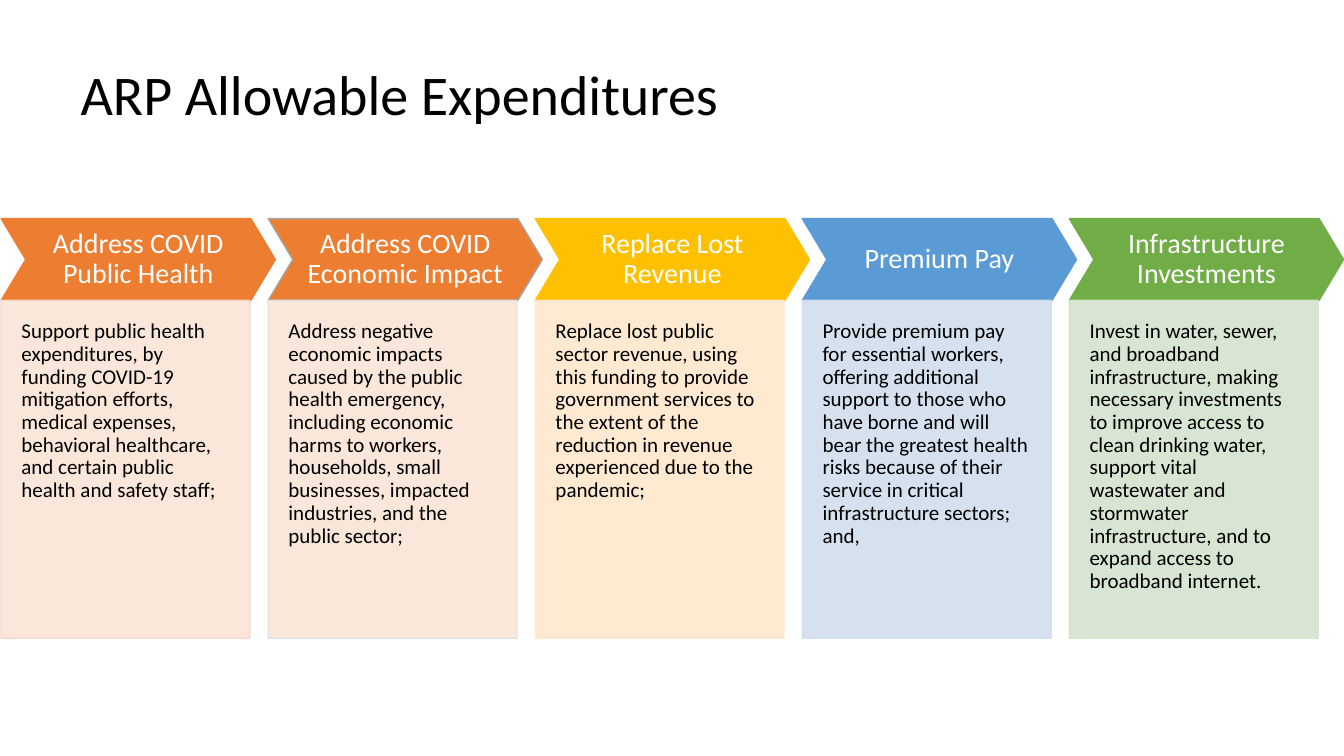
from lxml import etree
from pptx import Presentation
from pptx.dml.color import RGBColor
from pptx.enum.shapes import MSO_SHAPE
from pptx.enum.text import MSO_ANCHOR, MSO_AUTO_SIZE, PP_ALIGN
from pptx.oxml.ns import qn
from pptx.util import Cm, Pt

CHEVRON, RECT = MSO_SHAPE.CHEVRON, MSO_SHAPE.RECTANGLE
TOP, MIDDLE = MSO_ANCHOR.TOP, MSO_ANCHOR.MIDDLE
LEFT, CENTER = PP_ALIGN.LEFT, PP_ALIGN.CENTER
NO_FIT = MSO_AUTO_SIZE.NONE

FONT = "Calibri"
COLORS = {
    "black": "000000", "white": "FFFFFF",
    "orange": "ED7D31", "gray": "A5A5A5", "gold": "FFC000",
    "blue": "5B9BD5", "green": "70AD47",
    "pale_orange": "FBE5D6", "pale_rose": "F8D7CE", "pale_gray": "E1E1E1",
    "pale_gold": "FFE8CC", "pale_blue": "D2DEEF", "pale_green": "D5E3CF",
}

PITCH, HEAD_W, BODY_W = 6.73, 6.91, 6.27
HEAD_H, BODY_H = 2.06, 8.51

CATEGORIES = [
    ("Address COVID Public Health",
     "Support public health expenditures, by funding COVID-19 mitigation efforts, "
     "medical expenses, behavioral healthcare, and certain public health and safety staff;",
     "orange", "orange", "pale_orange", "pale_rose"),
    ("Address COVID Economic Impact",
     "Address negative economic impacts caused by the public health emergency, "
     "including economic harms to workers, households, small businesses, "
     "impacted industries, and the public sector;",
     "orange", "gray", "pale_orange", "pale_gray"),
    ("Replace Lost Revenue",
     "Replace lost public sector revenue, using this funding to provide government "
     "services to the extent of the reduction in revenue experienced due to the pandemic;",
     "gold", "gold", "pale_gold", "pale_gold"),
    ("Premium Pay",
     "Provide premium pay for essential workers, offering additional support to those "
     "who have borne and will bear the greatest health risks because of their service "
     "in critical infrastructure sectors; and,",
     "blue", "blue", "pale_blue", "pale_blue"),
    ("Infrastructure Investments",
     "Invest in water, sewer, and broadband infrastructure, making necessary investments "
     "to improve access to clean drinking water, support vital wastewater and stormwater "
     "infrastructure, and to expand access to broadband internet.",
     "green", "green", "pale_green", "pale_green"),
]


def rgb(name):
    """Return the named palette colour."""
    return RGBColor.from_string(COLORS[name])


def write(sp, text, size, color="black", align=LEFT, anchor=MIDDLE,
          insets=(0.25, 0.13, 0.25, 0.13)):
    """Fill a shape with one formatted paragraph."""
    tf = sp.text_frame
    tf.word_wrap = True
    tf.auto_size = NO_FIT
    tf.vertical_anchor = anchor
    tf.margin_left, tf.margin_top, tf.margin_right, tf.margin_bottom = map(Cm, insets)
    p = tf.paragraphs[0]
    p.alignment = align
    p.line_spacing = 0.9
    r = p.add_run()
    r.text = text
    r.font.name = FONT
    r.font.size = Pt(size)
    r.font.color.rgb = rgb(color)


def add_box(slide, kind, x, y, w, h, fill, line, opacity=100):
    """Add a filled, outlined shape with the given opacity in percent."""
    sp = slide.shapes.add_shape(kind, Cm(x), Cm(y), Cm(w), Cm(h))
    sp.shadow.inherit = False
    sp.fill.solid()
    sp.fill.fore_color.rgb = rgb(fill)
    sp.line.color.rgb = rgb(line)
    sp.line.width = Pt(1)
    if opacity < 100:
        for clr in sp.element.spPr.iter(qn("a:srgbClr")):
            etree.SubElement(clr, qn("a:alpha")).set("val", str(opacity * 1000))
    return sp


def add_title(slide, x, y, w, h):
    """Place and format the slide title."""
    sp = slide.shapes.title
    sp.left, sp.top, sp.width, sp.height = Cm(x), Cm(y), Cm(w), Cm(h)
    write(sp, "ARP Allowable Expenditures", 40)


def add_category(slide, x, y, category):
    """Add one chevron heading with its description below."""
    heading, detail, fill, line, body_fill, body_line = category
    sp = add_box(slide, CHEVRON, x, y, HEAD_W, HEAD_H, fill, line)
    sp.adjustments[0] = 0.3
    write(sp, heading, 20, color="white", align=CENTER, insets=(0.25,) * 4)
    sp = add_box(slide, RECT, x, y + HEAD_H, BODY_W, BODY_H, body_fill, body_line, opacity=90)
    write(sp, detail, 15, anchor=TOP, insets=(0.51, 0.51, 0.51, 0.99))


def main():
    """Build and save the slide."""
    prs = Presentation()
    prs.slide_width, prs.slide_height = Cm(33.87), Cm(19.05)
    slide = prs.slides.add_slide(prs.slide_layouts[5])
    add_title(slide, 1.78, 0.89, 30.3, 3.15)
    for i, category in enumerate(CATEGORIES):
        add_category(slide, 0.03 + i * PITCH, 5.51, category)
    prs.save("out.pptx")


if __name__ == "__main__":
    main()
